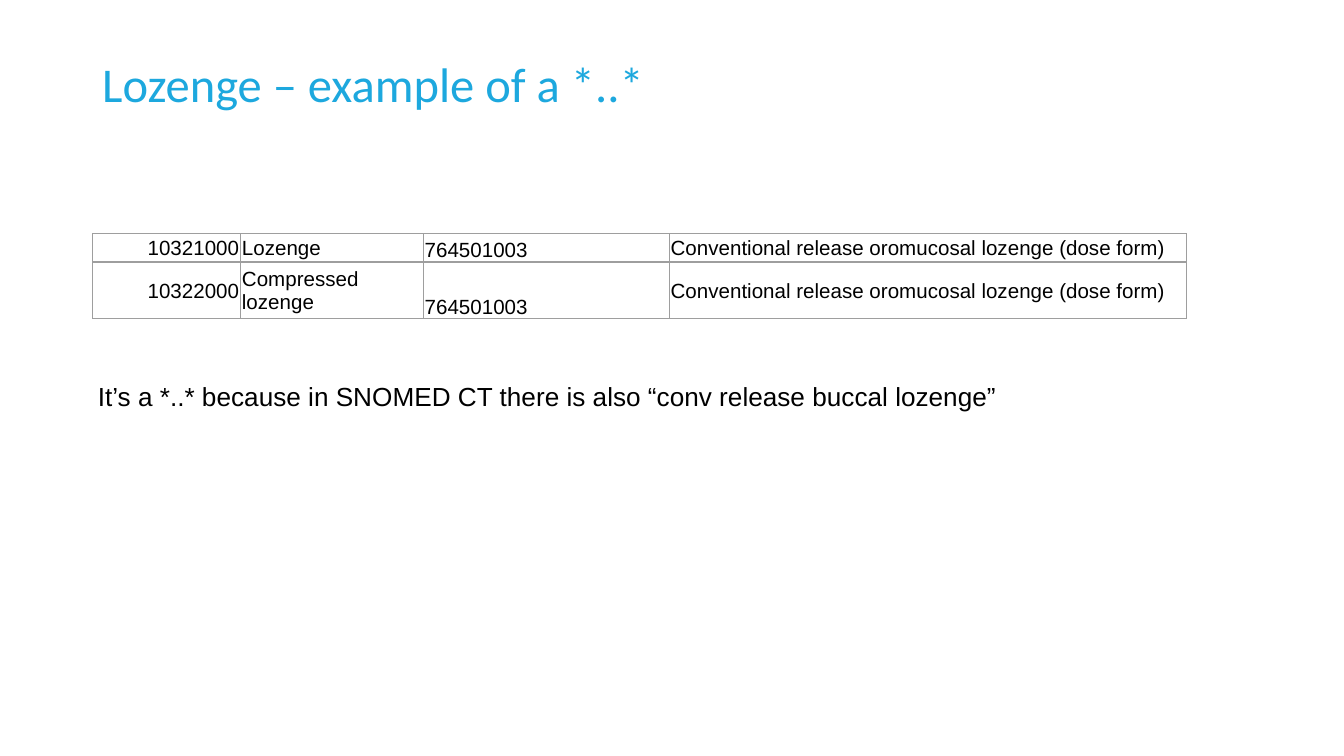
"""Build the lozenge dose form mapping slide."""
import pptx
import pptx.dml.color
import pptx.enum.text
import pptx.util
from lxml import etree
from pptx.oxml.ns import qn

Inches = pptx.util.Inches
ALIGN = pptx.enum.text.PP_ALIGN
ANCHOR = pptx.enum.text.MSO_ANCHOR

COLOURS = {"title": "1DA8DE", "text": "000000", "border": "9E9E9E"}
HEADING = "Lozenge – example of a *..*"
EXPLANATION = "It’s a *..* because in SNOMED CT there is also “conv release buccal lozenge”"
MAPPINGS = [
    ("10321000", "Lozenge", "764501003", "Conventional release oromucosal lozenge (dose form)"),
    ("10322000", "Compressed lozenge", "764501003", "Conventional release oromucosal lozenge (dose form)"),
]
COLUMNS = [
    (1.1, ALIGN.RIGHT, ANCHOR.MIDDLE),
    (1.36, ALIGN.LEFT, ANCHOR.MIDDLE),
    (1.83, ALIGN.LEFT, ANCHOR.BOTTOM),
    (3.85, ALIGN.LEFT, ANCHOR.MIDDLE),
]
ROW_HEIGHTS = [0.21, 0.42]


def add_run(paragraph, text, size, font, colour):
    run = paragraph.add_run()
    run.text = text
    run.font.size = pptx.util.Pt(size)
    run.font.name = font
    run.font.color.rgb = pptx.dml.color.RGBColor.from_string(COLOURS[colour])


def add_borders(cell):
    properties = cell._tc.get_or_add_tcPr()
    for side in ("a:lnL", "a:lnR", "a:lnT", "a:lnB"):
        line = etree.SubElement(properties, qn(side), w=str(pptx.util.Pt(0.75)))
        fill = etree.SubElement(line, qn("a:solidFill"))
        etree.SubElement(fill, qn("a:srgbClr"), val=COLOURS["border"])


def add_title(slide):
    title = slide.shapes.title
    title.left, title.top, title.width, title.height = map(Inches, (0.69, 0.3, 8.62, 0.69))
    frame = title.text_frame
    frame.word_wrap = True
    frame.vertical_anchor = ANCHOR.MIDDLE
    frame.margin_left = frame.margin_right = Inches(0.07)
    frame.margin_top = frame.margin_bottom = Inches(0.04)
    paragraph = frame.paragraphs[0]
    paragraph.alignment = ALIGN.LEFT
    paragraph.line_spacing = 0.9
    add_run(paragraph, HEADING, 26, "Calibri", "title")


def add_mappings(slide):
    width = sum(column[0] for column in COLUMNS)
    table = slide.shapes.add_table(
        len(MAPPINGS), len(COLUMNS), Inches(0.69), Inches(1.74),
        Inches(width), Inches(sum(ROW_HEIGHTS)),
    ).table
    table.first_row = table.horz_banding = False
    for column, (column_width, _, _) in zip(table.columns, COLUMNS):
        column.width = Inches(column_width)
    for row, height, mapping in zip(table.rows, ROW_HEIGHTS, MAPPINGS):
        row.height = Inches(height)
        for cell, text, (_, alignment, anchor) in zip(row.cells, mapping, COLUMNS):
            add_borders(cell)
            cell.fill.background()
            cell.vertical_anchor = anchor
            cell.margin_left = cell.margin_right = cell.margin_top = Inches(0.01)
            cell.margin_bottom = 0
            paragraph = cell.text_frame.paragraphs[0]
            paragraph.alignment = alignment
            add_run(paragraph, text, 11, "Arial", "text")


def add_explanation(slide):
    box = slide.shapes.add_textbox(Inches(0.63), Inches(2.78), Inches(8.37), Inches(0.34))
    frame = box.text_frame
    frame.word_wrap = True
    frame.auto_size = pptx.enum.text.MSO_AUTO_SIZE.SHAPE_TO_FIT_TEXT
    add_run(frame.paragraphs[0], EXPLANATION, 14, "Arial", "text")


def main():
    presentation = pptx.Presentation()
    presentation.slide_width = Inches(10)
    presentation.slide_height = presentation.slide_width * 9 // 16
    slide = presentation.slides.add_slide(presentation.slide_layouts[5])
    add_title(slide)
    add_mappings(slide)
    add_explanation(slide)
    presentation.save("out.pptx")


if __name__ == "__main__":
    main()
